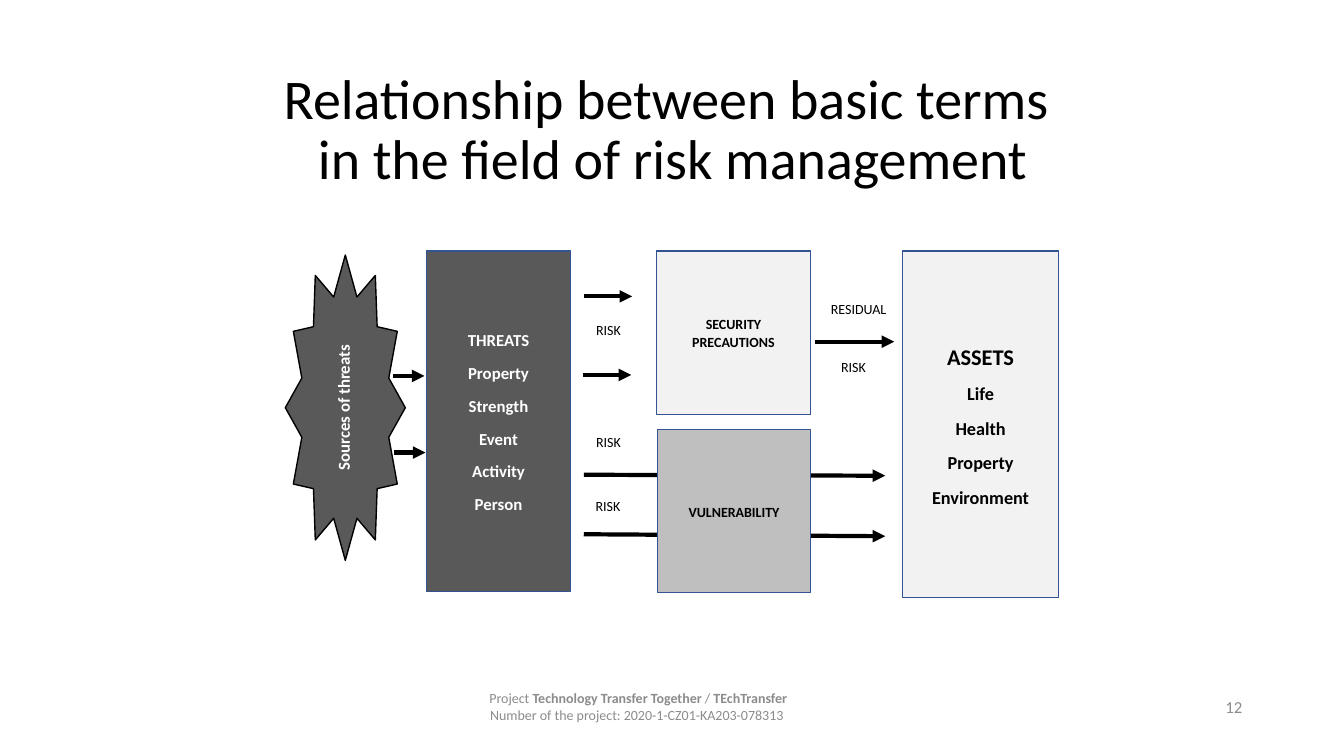
from lxml import etree
from pptx import Presentation
from pptx import util as u
from pptx.dml.color import RGBColor
from pptx.enum import shapes, text
from pptx.oxml import ns

BLACK = RGBColor(0x00, 0x00, 0x00)
WHITE = RGBColor(0xFF, 0xFF, 0xFF)
DARK = RGBColor(0x59, 0x59, 0x59)
MID = RGBColor(0xBF, 0xBF, 0xBF)
LIGHT = RGBColor(0xF2, 0xF2, 0xF2)
GREY = RGBColor(0x8C, 0x8C, 0x8C)
BLUE = RGBColor(0x32, 0x54, 0x91)

ALIGN = text.PP_ALIGN
ANCHOR = text.MSO_ANCHOR
KIND = shapes.MSO_SHAPE


def write(shape, lines, size=10, color=BLACK, bold=False, align=ALIGN.CENTER,
          anchor=ANCHOR.MIDDLE, space=1.07, after=8, font="Calibri"):
    """Fill a shape with lines; a line is a string or a list of (text, changes).

    A newline within a text becomes a line break in the same paragraph.
    """
    frame = shape.text_frame
    frame.word_wrap = True
    frame.vertical_anchor = anchor
    for i, line in enumerate(lines):
        para = frame.paragraphs[0] if i == 0 else frame.add_paragraph()
        para.alignment = align
        para.line_spacing = space
        para.space_after = u.Pt(after)
        for words, change in [(line, {})] if isinstance(line, str) else line:
            for j, part in enumerate(words.split("\n")):
                if j:
                    para.add_line_break()
                run = para.add_run()
                run.text = part
                run.font.name = font
                run.font.size = u.Pt(change.get("size", size))
                run.font.bold = change.get("bold", bold)
                run.font.color.rgb = color


class Board:
    """Holds the line style and the current slide."""

    def __init__(self, slide, edge=BLUE, thin=1, thick=3):
        self.items = slide.shapes
        self.edge, self.thin, self.thick = edge, thin, thick

    def label(self, at, lines, **form):
        area = self.items.add_textbox(*map(u.Inches, at))
        write(area, lines, **form)

    def box(self, at, fill, lines, kind=KIND.RECTANGLE, edge=None, **form):
        shape = self.items.add_shape(kind, *map(u.Inches, at))
        shape.shadow.inherit = False
        shape.fill.solid()
        shape.fill.fore_color.rgb = fill
        shape.line.color.rgb = edge or self.edge
        shape.line.width = u.Pt(self.thin)
        write(shape, lines, bold=True, **form)
        return shape

    def arrow(self, *ends):
        line = self.items.add_connector(shapes.MSO_CONNECTOR.STRAIGHT, *map(u.Inches, ends))
        line.line.color.rgb = BLACK
        line.line.width = u.Pt(self.thick)
        etree.SubElement(line.line._get_or_add_ln(), ns.qn("a:tailEnd"), type="triangle")
        etree.SubElement(line._element.spPr, ns.qn("a:effectLst"))


def main():
    deck = Presentation()
    deck.slide_width, deck.slide_height = u.Inches(13.33), u.Inches(7.5)
    board = Board(deck.slides.add_slide(deck.slide_layouts[6]))

    board.label((0.92, 0.58, 11.5, 1.45),
                ["Relationship between basic terms \nin the field of risk management"],
                size=40, space=0.9, after=0)
    board.label((11.53, 6.81, 0.89, 0.4), ["12"], size=12, color=GREY,
                align=ALIGN.RIGHT, space=1, after=0)
    strong = {"bold": True}
    board.label((4.42, 6.81, 3.82, 0.39), [
        [("Project ", {}), ("Technology Transfer Together", strong),
         (" / ", {}), ("TEchTransfer", strong)],
        "Number of the project: 2020-1-CZ01-KA203-078313 ",
    ], color=GREY, space=1, after=0)

    for ends in [(5.79, 2.94, 6.27, 2.94), (5.78, 3.72, 6.26, 3.72),
                 (8.08, 3.39, 8.87, 3.39), (3.9, 3.73, 4.21, 3.73),
                 (3.91, 4.49, 4.22, 4.49), (5.79, 4.71, 8.78, 4.72),
                 (5.79, 5.3, 8.78, 5.32)]:
        board.arrow(*ends)

    for left, top, width, word in [
            (5.59, 3.13, 0.89, "RISK"), (5.59, 4.24, 0.89, "RISK"),
            (5.6, 4.87, 0.86, "RISK"), (8.02, 2.92, 0.99, "RESIDUAL"),
            (8.08, 3.5, 0.77, "RISK")]:
        board.label((left, top, width, 0.39), [word], anchor=ANCHOR.TOP)

    board.box((4.23, 2.49, 1.43, 3.38), DARK,
              ["THREATS", "Property", "Strength", "Event", "Activity", "Person"],
              size=12, color=WHITE)
    board.box((6.51, 2.49, 1.53, 1.62), LIGHT, ["SECURITY PRECAUTIONS"])
    board.box((6.52, 4.26, 1.52, 1.62), MID, ["VULNERABILITY"])
    board.box((8.95, 2.49, 1.55, 3.44), LIGHT,
              [[("ASSETS", {"size": 16})], "Life", "Health", "Property", "Environment"],
              size=13)
    star = board.box((2.83, 2.53, 1.19, 3.03), DARK, ["Sources of threats"],
                     kind=KIND.STAR_12_POINT, edge=BLACK, size=12, color=WHITE, space=0.75)
    star.text_frame._txBody.bodyPr.set("vert", "vert270")

    deck.save("out.pptx")


if __name__ == "__main__":
    main()
